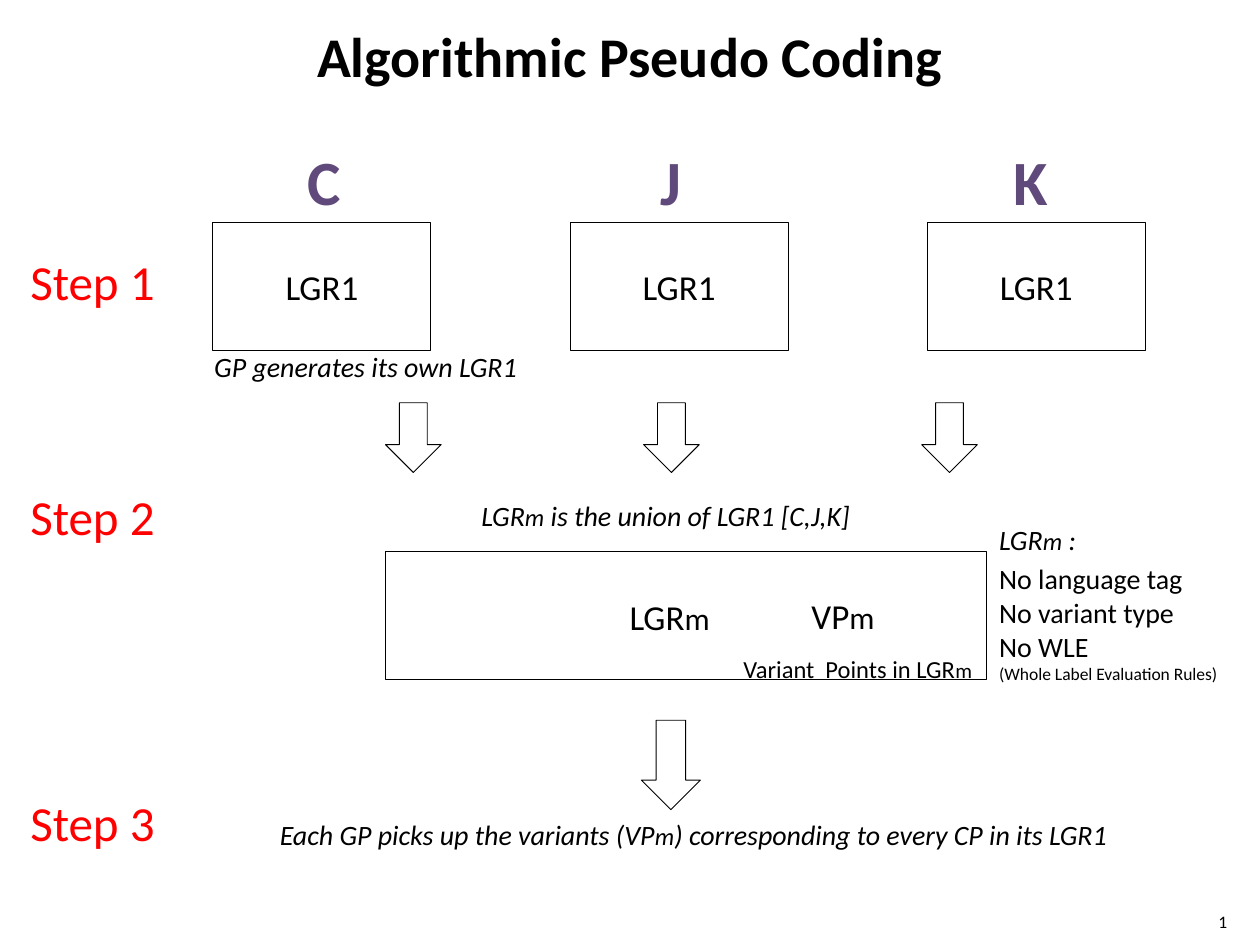
"""Build the slide on algorithmic pseudo coding in three steps."""
from pptx import Presentation
from pptx.dml.color import RGBColor
from pptx.enum.shapes import MSO_SHAPE as Shape
from pptx.enum.text import MSO_ANCHOR as Anchor, MSO_AUTO_SIZE as AutoSize, PP_ALIGN as Align
from pptx.util import Pt

BLACK, RED, PURPLE = "000000", "FF0000", "604A7B"
FONT = "Calibri"
SMALL = "|"

TITLE = ("Algorithmic Pseudo Coding", (36, 3.6, 648, 55.4))
PAGE_NUMBER = ("1", (683.3, 516.2, 31, 20.9))
PANELS = [("C", 25.2), ("J", 18), ("K", 25.9)]
PANEL_TEXT = "LGR1"
PANEL_LEFT, PANEL_TOP, PANEL_PITCH = 121.7, 126.9, 204.1
PANEL_WIDTH, PANEL_HEIGHT = 124.6, 73.4
LETTER_LEFT, LETTER_PITCH = 172.8, 201.6
STEPS = [("Step 1", 144), ("Step 2", 278), ("Step 3", 453)]
UNION_BOX = (220.3, 315.1, 343.4, 73.4)
UNION_LABEL = ("LGR|m", (320.4, 318.6, 124.6, 67.7))
ARROWS = [
    (366.5, 411.6, 33.8, 51.1),
    (220.3, 230.2, 31.8, 39.8),
    (367.8, 230.2, 31.8, 39.8),
    (526.7, 230.2, 31.8, 39.8),
]
REMARKS = [
    ("GP generates its own LGR1", (119.5, 199.7, 181.4, 19.4)),
    ("LGR|m| is the union of LGR1 [C,J,K]", (272.2, 285.1, 223.2, 19.4)),
    ("LGR|m| :", (568.1, 298.4, 50.4, 19.4)),
    ("Each GP picks up the variants (VP|m|) corresponding to every CP in its LGR1",
     (157, 467.3, 485.3, 19.4)),
]
VARIANT_POINTS = [
    ("VP|m", (460.8, 339.8, 43.9, 24.5), 20),
    ("Variant  Points in LGR|m", (421.9, 373.7, 139, 17.3), 14),
]
LIMITS = (["No language tag", "No variant type", "No WLE"], "(Whole Label Evaluation Rules)",
          (568.1, 321.1, 131.8, 70.6))


def color(value):
    return RGBColor.from_string(value)


def fill_text(frame, lines, size, ink=BLACK, bold=False, italic=False,
              align=Align.LEFT, anchor=Anchor.TOP, inset=0):
    frame.margin_left = frame.margin_right = Pt(2.9)
    frame.margin_top = frame.margin_bottom = Pt(inset)
    frame.vertical_anchor = anchor
    frame.text = "\n".join(line.split(SMALL)[0] for line in lines)
    for paragraph, line in zip(frame.paragraphs, lines):
        paragraph.alignment = align
        for piece in line.split(SMALL)[1:]:
            paragraph.add_run().text = piece
        for index, run in enumerate(paragraph.runs):
            font = run.font
            font.name, font.bold, font.italic = FONT, bold, italic
            font.size = Pt(size - 2 * (index % 2))
            font.color.rgb = color(ink)


def add_label(slide, lines, place, size, wrap=False, **style):
    frame = slide.shapes.add_textbox(*map(Pt, place)).text_frame
    frame.word_wrap = wrap
    frame.auto_size = AutoSize.NONE if wrap else AutoSize.SHAPE_TO_FIT_TEXT
    fill_text(frame, lines, size, **style)
    return frame


def add_outline(slide, preset, place):
    shape = slide.shapes.add_shape(preset, *map(Pt, place))
    shape.shadow.inherit = False
    shape.fill.background()
    shape.line.color.rgb = color(BLACK)
    shape.line.width = Pt(0.5)
    return shape


def main():
    deck = Presentation()
    deck.slide_width, deck.slide_height = Pt(720), Pt(540)
    slide = deck.slides.add_slide(deck.slide_layouts[6])
    centred = {"align": Align.CENTER, "anchor": Anchor.MIDDLE}

    for (text, place), size, bold in [(TITLE, 32, True), (PAGE_NUMBER, 10, False)]:
        add_label(slide, [text], place, size, wrap=True, bold=bold, **centred)

    for column, (letter, letter_width) in enumerate(PANELS):
        panel_left = PANEL_LEFT + column * PANEL_PITCH
        panel = add_outline(slide, Shape.RECTANGLE,
                            (panel_left, PANEL_TOP, PANEL_WIDTH, PANEL_HEIGHT))
        fill_text(panel.text_frame, [PANEL_TEXT], 20, inset=2.9, **centred)
        letter_left = LETTER_LEFT + column * LETTER_PITCH
        add_label(slide, [letter], (letter_left, 81.4, letter_width, 43.9), 36,
                  ink=PURPLE, bold=True)

    add_outline(slide, Shape.RECTANGLE, UNION_BOX)
    union_text, union_place = UNION_LABEL
    add_label(slide, [union_text], union_place, 20, wrap=True, inset=2.9, **centred)
    for text, place, size in VARIANT_POINTS:
        add_label(slide, [text], place, size)

    for place in ARROWS:
        add_outline(slide, Shape.DOWN_ARROW, place)
    for step, top in STEPS:
        add_label(slide, [step], (14.4, top, 77.8, 33.8), 28, ink=RED)
    for text, place in REMARKS:
        add_label(slide, [text], place, 16, italic=True)

    limits, explanation, place = LIMITS
    frame = add_label(slide, limits + [explanation], place, 16)
    frame.paragraphs[-1].runs[0].font.size = Pt(10)

    deck.save("out.pptx")


if __name__ == "__main__":
    main()
